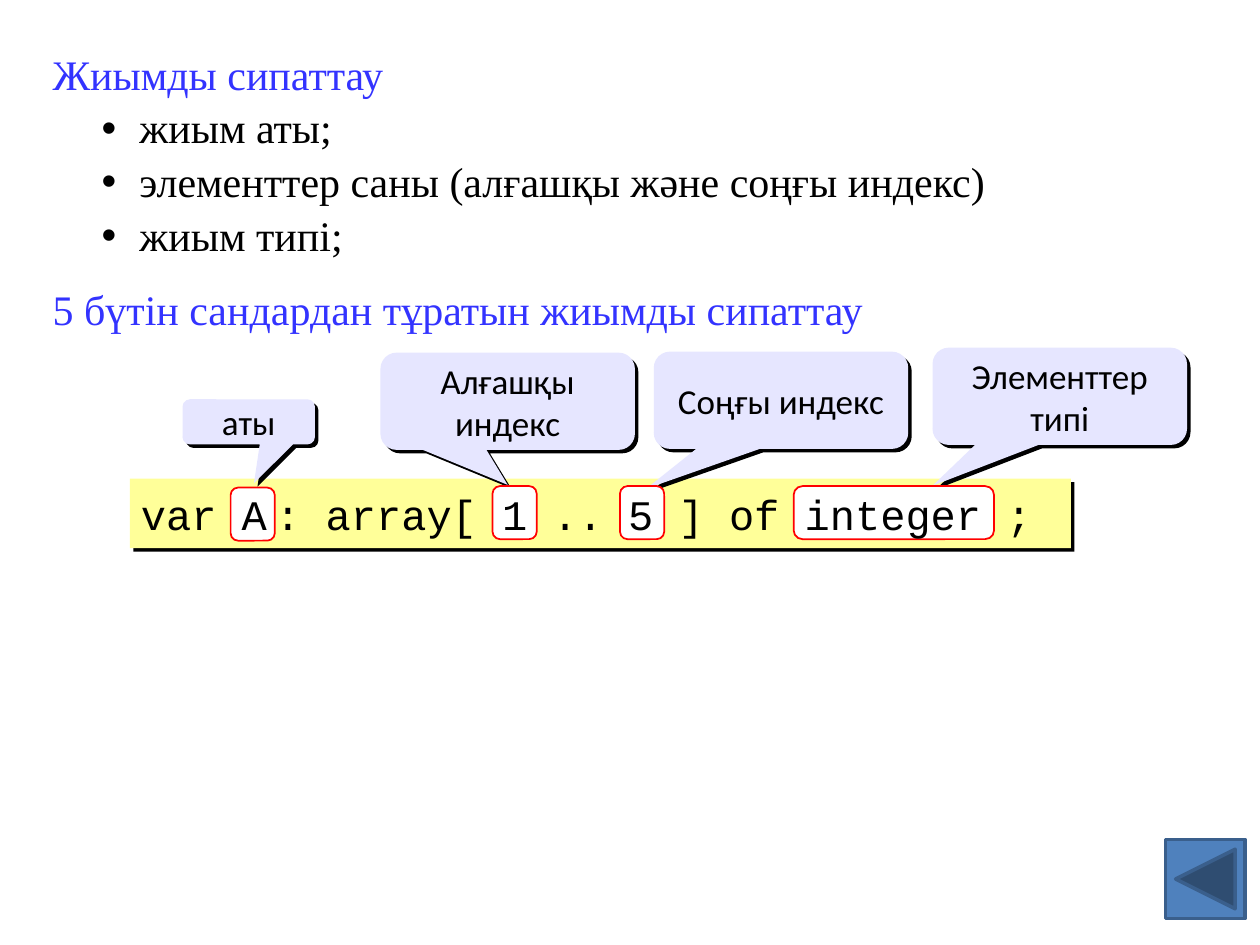
from dataclasses import dataclass

from lxml import etree
from pptx import Presentation
from pptx.dml.color import RGBColor
from pptx.enum.shapes import MSO_SHAPE
from pptx.enum.text import MSO_ANCHOR, PP_ALIGN
from pptx.oxml.ns import qn
from pptx.util import Cm, Pt

RECT = MSO_SHAPE.RECTANGLE
ROUND_RECT = MSO_SHAPE.ROUNDED_RECTANGLE
CALLOUT = MSO_SHAPE.ROUNDED_RECTANGULAR_CALLOUT
BACK_BUTTON = MSO_SHAPE.ACTION_BUTTON_BACK_OR_PREVIOUS
CENTER = PP_ALIGN.CENTER
MIDDLE = MSO_ANCHOR.MIDDLE


@dataclass(frozen=True)
class Theme:
    heading: str = "3333FF"
    ink: str = "000000"
    code_fill: str = "FFFF99"
    callout_fill: str = "E6E6FF"
    mark_fill: str = "FFFFFF"
    mark_line: str = "FF0000"
    button_fill: str = "4F81BD"
    button_line: str = "3A5F8C"
    body_font: str = "Times New Roman"
    code_font: str = "Courier New"
    label_font: str = "Calibri"
    body_size: float = 24
    label_size: float = 20
    narrow_gap_size: float = 8


@dataclass(frozen=True)
class Box:
    left: float
    top: float
    width: float
    height: float

    def emu(self) -> tuple:
        return Cm(self.left), Cm(self.top), Cm(self.width), Cm(self.height)


@dataclass(frozen=True)
class Label:
    text: str
    box: Box
    tip_x: float
    tip_y: float


@dataclass(frozen=True)
class Line:
    text: str
    before: float
    bullet: bool = False


THEME = Theme()
LINES = [
    Line("Жиымды сипаттау", 2),
    Line("жиым аты;", 4.8, True),
    Line("элементтер саны (алғашқы және соңғы индекс)", 4.8, True),
    Line("жиым типі;", 4.8, True),
    Line("5 бүтін сандардан тұратын жиымды сипаттау", 13),
]
LABELS = [
    Label("аты", Box(3.68, 8.05, 2.67, 0.91), 0.04, 1.36),
    Label("Алғашқы индекс", Box(7.67, 7.11, 5.13, 1.96), 0, 0.86),
    Label("Соңғы индекс", Box(13.18, 7.09, 5.13, 1.96), -0.53, 0.91),
    Label("Элементтер типі", Box(18.8, 7.01, 5.13, 1.96), -0.5, 0.92),
]
MARKS = [
    Box(4.65, 9.83, 0.89, 1.07),
    Box(9.93, 9.8, 0.89, 1.07),
    Box(12.5, 9.8, 0.89, 1.07),
    Box(16, 9.8, 4.04, 1.07),
]
CODE_RUNS = [
    ("var A", THEME.body_size),
    (" ", THEME.narrow_gap_size),
    (": array[ 1 .. 5 ] of integer ;", THEME.body_size),
]


def style_run(r, font: str, size: float, color: str) -> None:
    r.font.name = font
    r.font.size = Pt(size)
    r.font.color.rgb = RGBColor.from_string(color)


def add_shape(s, kind, box: Box, fill: str, line: str = "", weight: float = 1):
    sp = s.shapes.add_shape(kind, *box.emu())
    sp.fill.solid()
    sp.fill.fore_color.rgb = RGBColor.from_string(fill)
    if line:
        sp.line.color.rgb = RGBColor.from_string(line)
        sp.line.width = Pt(weight)
    else:
        sp.line.fill.background()
    sp.shadow.inherit = False
    return sp


def add_hard_shadow(sp) -> None:
    effects = sp._element.spPr.find(qn("a:effectLst"))
    shadow = etree.SubElement(effects, qn("a:outerShdw"), dist=str(Pt(2.8)),
                              dir="2700000", algn="ctr", rotWithShape="0")
    etree.SubElement(shadow, qn("a:srgbClr"), val=THEME.ink)


def add_text_box(s, box: Box):
    tf = s.shapes.add_textbox(*box.emu()).text_frame
    tf.word_wrap = True
    return tf


def set_indent(p, margin: float, hanging: float, bullet: bool) -> None:
    pPr = p._p.get_or_add_pPr()
    pPr.set("marL", str(Cm(margin)))
    pPr.set("indent", str(-Cm(hanging)))
    if bullet:
        etree.SubElement(pPr, qn("a:buFont"), typeface="Arial")
        etree.SubElement(pPr, qn("a:buChar"), char="•")


def add_body(s, lines: list[Line]) -> None:
    tf = add_text_box(s, Box(0.81, 0.86, 23.39, 11.68))
    for i, line in enumerate(lines):
        p = tf.paragraphs[0] if i == 0 else tf.add_paragraph()
        p.text = line.text
        p.space_before = Pt(line.before)
        if line.bullet:
            p.level = 1
            p.line_spacing = 0.9
            set_indent(p, 1.75, 0.76, True)
        else:
            set_indent(p, 0.48, 0.48, False)
        color = THEME.ink if line.bullet else THEME.heading
        style_run(p.runs[0], THEME.body_font, THEME.body_size, color)


def add_callout(s, label: Label) -> None:
    sp = add_shape(s, CALLOUT, label.box, THEME.callout_fill)
    sp.adjustments[0] = label.tip_x
    sp.adjustments[1] = label.tip_y
    add_hard_shadow(sp)
    tf = sp.text_frame
    tf.word_wrap = True
    tf.vertical_anchor = MIDDLE
    tf.text = label.text
    p = tf.paragraphs[0]
    p.alignment = CENTER
    style_run(p.runs[0], THEME.label_font, THEME.label_size, THEME.ink)


def add_code(s) -> None:
    p = add_text_box(s, Box(2.59, 9.73, 18.77, 1.27)).paragraphs[0]
    p.space_before = Pt(4.8)
    for text, size in CODE_RUNS:
        r = p.add_run()
        r.text = text
        style_run(r, THEME.code_font, size, THEME.ink)


def main() -> None:
    prs = Presentation()
    prs.slide_width, prs.slide_height = Cm(25.4), Cm(19.05)
    s = prs.slides.add_slide(prs.slide_layouts[6])
    panel = add_shape(s, RECT, Box(2.62, 9.65, 18.97, 1.4), THEME.code_fill)
    add_hard_shadow(panel)
    add_body(s, LINES)
    for label in LABELS:
        add_callout(s, label)
    for box in MARKS:
        add_shape(s, ROUND_RECT, box, THEME.mark_fill, THEME.mark_line)
    add_code(s)
    add_shape(s, BACK_BUTTON, Box(23.5, 16.92, 1.6, 1.6),
              THEME.button_fill, THEME.button_line, 2)
    prs.save("out.pptx")


if __name__ == "__main__":
    main()
